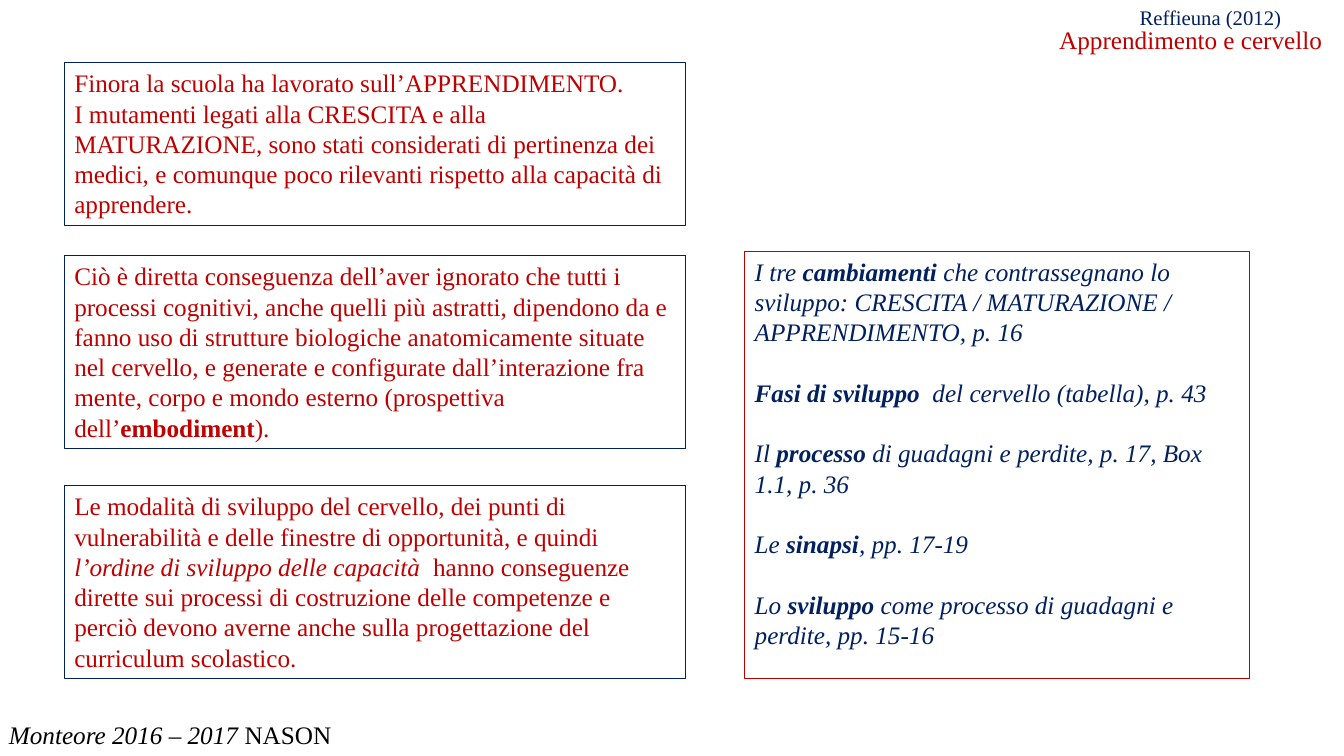
from pptx import Presentation
from pptx.dml.color import RGBColor
from pptx.enum.shapes import MSO_SHAPE as Shape
from pptx.enum.text import MSO_ANCHOR as Anchor, PP_ALIGN as Align
from pptx.util import Pt

NAVY, RED, BLACK = "002060", "C00000", "000000"


def color(hex_code):
    return RGBColor.from_string(hex_code)


def write(box, paragraphs, ink, size=18, gap=0, line_spacing=1.0):
    """Fill a box with paragraphs, each a list of (text, style); style may hold b and i."""
    frame = box.text_frame
    frame.word_wrap = True
    frame.vertical_anchor = Anchor.TOP
    for index, spans in enumerate(paragraphs):
        para = frame.paragraphs[0] if index == 0 else frame.add_paragraph()
        para.alignment = Align.LEFT
        para.line_spacing = line_spacing
        para.space_before = Pt(gap if index else 0)
        for text, style in spans:
            span = para.add_run()
            span.text = text
            span.font.name = "Times New Roman"
            span.font.size = Pt(size)
            span.font.bold = "b" in style
            span.font.italic = "i" in style
            span.font.color.rgb = color(ink)


deck = Presentation()
deck.slide_width, deck.slide_height = Pt(960), Pt(540)
page = deck.slides.add_slide(deck.slide_layouts[6])

# Loose labels: left, top, width, height, spans, ink, size, line spacing
labels = [
    (807, 3.6, 161.5, 22, [("Reffieuna (2012)", "")], NAVY, 14.8, 0.8),
    (749.5, 16, 210.5, 26.5, [("Apprendimento e cervello", "")], RED, 18, 0.9),
    (-0.7, 510.5, 261.5, 29, [("Monteore 2016 – 2017 ", "i"), ("NASON", "")], BLACK, 18, 1.0),
]
for left, top, width, height, spans, ink, size, line_spacing in labels:
    label = page.shapes.add_textbox(Pt(left), Pt(top), Pt(width), Pt(height))
    write(label, [spans], ink, size, line_spacing=line_spacing)

school = [
    [("Finora la scuola ha lavorato sull’APPRENDIMENTO.", "")],
    [("I mutamenti legati alla CRESCITA e alla MATURAZIONE, sono stati considerati di "
      "pertinenza dei medici, e comunque poco rilevanti rispetto alla capacità di "
      "apprendere.", "")],
]
embodiment = [
    [("Ciò è diretta conseguenza dell’aver ignorato che tutti i processi cognitivi, anche "
      "quelli più astratti, dipendono da e fanno uso di strutture biologiche "
      "anatomicamente situate nel cervello, e generate e configurate dall’interazione fra "
      "mente, corpo e mondo esterno (prospettiva dell’", ""),
     ("embodiment", "b"), (").", "")],
]
curriculum = [
    [("Le modalità di sviluppo del cervello, dei punti di vulnerabilità e delle finestre di "
      "opportunità, e quindi ", ""),
     ("l’ordine di sviluppo delle capacità  ", "i"),
     ("hanno conseguenze dirette sui processi di costruzione delle competenze e perciò "
      "devono averne anche sulla progettazione del curriculum scolastico.", "")],
]
references = [
    [("I tre ", "i"), ("cambiamenti", "bi"),
     (" che contrassegnano lo sviluppo: CRESCITA / MATURAZIONE / APPRENDIMENTO, p. 16", "i")],
    [("Fasi di sviluppo ", "bi"), (" del cervello (tabella), p. 43", "i")],
    [("Il ", "i"), ("processo", "bi"), (" di guadagni e perdite, p. 17, Box 1.1, p. 36", "i")],
    [("Le ", "i"), ("sinapsi", "bi"), (", pp. 17-19", "i")],
    [("Lo ", "i"), ("sviluppo", "bi"),
     (" come processo di guadagni e perdite, pp. 15-16", "i")],
]

# Framed boxes: left, top, width, height, paragraphs, ink, border, gap
frames = [
    (46, 44.8, 443.5, 116.5, school, RED, NAVY, 0),
    (46, 182.7, 443.5, 138, embodiment, RED, NAVY, 0),
    (46, 347, 443.5, 138, curriculum, RED, NAVY, 0),
    (532, 179.5, 360.5, 305, references, NAVY, RED, 21.6),
]
for left, top, width, height, paragraphs, ink, border, gap in frames:
    box = page.shapes.add_shape(Shape.RECTANGLE, Pt(left), Pt(top), Pt(width), Pt(height))
    box.shadow.inherit = False
    box.fill.background()
    box.line.color.rgb = color(border)
    box.line.width = Pt(0.75)
    write(box, paragraphs, ink, gap=gap)

deck.save("out.pptx")
